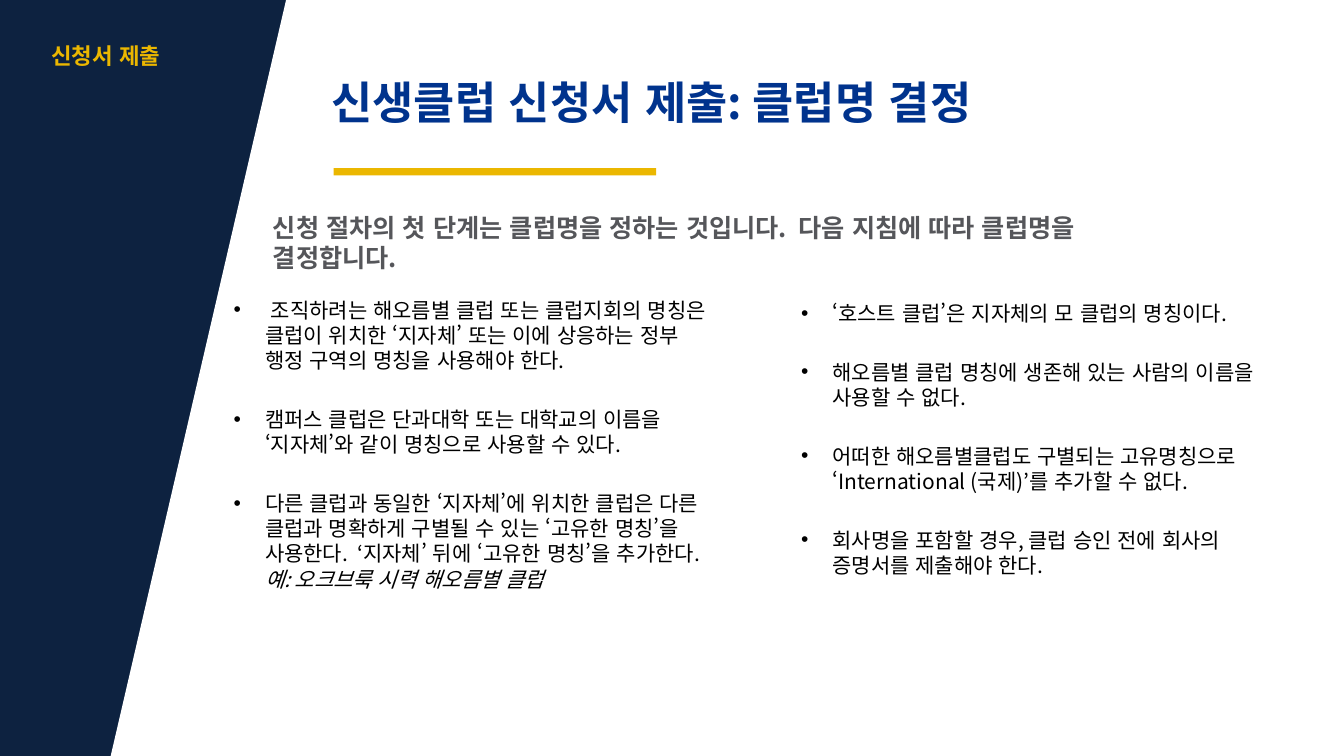
from lxml import etree
from pptx import Presentation
from pptx.dml.color import RGBColor
from pptx.enum.lang import MSO_LANGUAGE_ID as LANG
from pptx.enum.shapes import MSO_SHAPE
from pptx.enum.text import MSO_ANCHOR, PP_ALIGN
from pptx.oxml.ns import qn
from pptx.util import Cm, Pt

NAVY = RGBColor(0x0D, 0x22, 0x40)
BLUE = RGBColor(0x00, 0x33, 0x8D)
GOLD = RGBColor(0xEB, 0xB7, 0x00)
GRAY = RGBColor(0x55, 0x56, 0x5A)
BLACK = RGBColor(0, 0, 0)
WHITE = RGBColor(0xFF, 0xFF, 0xFF)
FONT = "Noto Sans CJK KR"
WIDTH, HEIGHT = 33.87, 19.05

NAMING_RULES = [
    [(" ", "조직하려는 해오름별 클럽 또는 클럽지회의 명칭은 클럽이 위치한 ‘지자체’ "
      "또는 이에 상응하는 정부 행정 구역의 명칭을 사용해야 한다."),
     ("캠퍼스 클럽은 단과대학 또는 대학교의 이름을 ‘지자체’와 같이 명칭으로 사용할 수 있다.",),
     ("다른 클럽과 동일한 ‘지자체’에 위치한 클럽은 다른 클럽과 명확하게 구별될 수 있는 "
      "‘고유한 명칭’을 사용한다.  ‘지자체’ 뒤에 ‘고유한 명칭’을 추가한다. ",
      "예: 오크브룩 시력 해오름별 클럽")],
    [("‘호스트 클럽’은 지자체의 모 클럽의 명칭이다.",),
     ("해오름별 클럽 명칭에 생존해 있는 사람의 이름을 사용할 수 없다.",),
     ("어떠한 해오름별클럽도 구별되는 고유명칭으로 ‘International (국제)’를 추가할 수 없다.",),
     ("회사명을 포함할 경우, 클럽 승인 전에 회사의 증명서를 제출해야 한다.",)],
]


def add_run(p, text, size=15, color=BLACK, bold=False, italic=False):
    r = p.add_run()
    r.text = text
    r.font.name, r.font.size = FONT, Pt(size)
    r.font.bold, r.font.italic = bold, italic
    r.font.color.rgb = color
    r.font.language_id = LANG.KOREAN
    ea = etree.SubElement(r._r.get_or_add_rPr(), qn("a:ea"))
    ea.set("typeface", FONT)


class ClubSlide:
    def __init__(self, prs):
        self.slide = prs.slides.add_slide(prs.slide_layouts[5])
        self.shapes = self.slide.shapes

    def paint(self, sp, color):
        sp.shadow.inherit = False
        sp.fill.solid()
        sp.fill.fore_color.rgb = color
        sp.line.fill.background()

    def rect(self, x, y, w, h, color):
        sp = self.shapes.add_shape(MSO_SHAPE.RECTANGLE, Cm(x), Cm(y), Cm(w), Cm(h))
        self.paint(sp, color)

    def outline(self, points, color):
        start, *rest = [(Cm(x), Cm(y)) for x, y in points]
        builder = self.shapes.build_freeform(*start)
        builder.add_line_segments(rest, close=True)
        self.paint(builder.convert_to_shape(), color)

    def frame(self, sp, x, y, w, h):
        sp.left, sp.top, sp.width, sp.height = Cm(x), Cm(y), Cm(w), Cm(h)
        tf = sp.text_frame
        tf.word_wrap = True
        tf.vertical_anchor = MSO_ANCHOR.TOP
        return tf

    def text(self, text, x, y, w, h, sp=None, spacing=None, **style):
        sp = sp or self.shapes.add_textbox(0, 0, 0, 0)
        p = self.frame(sp, x, y, w, h).paragraphs[0]
        p.alignment = PP_ALIGN.LEFT
        p.line_spacing = spacing
        add_run(p, text, **style)

    def title(self, text, x, y, w, h, **style):
        sp = self.shapes.title
        self.shapes._spTree.append(sp._element)
        self.text(text, x, y, w, h, sp=sp, **style)

    def bullets(self, items, x, y, w, h):
        tf = self.frame(self.shapes.add_textbox(0, 0, 0, 0), x, y, w, h)
        tf.margin_top = 0
        for i, parts in enumerate(items):
            p = tf.paragraphs[0] if i == 0 else tf.add_paragraph()
            pPr = p._p.get_or_add_pPr()
            pPr.set("marL", str(Cm(0.79)))
            pPr.set("indent", str(-Cm(0.79)))
            etree.SubElement(pPr, qn("a:buFont")).set("typeface", "Arial")
            etree.SubElement(pPr, qn("a:buChar")).set("char", "•")
            p.space_before = Pt(24 if i else 0)
            for part in parts:
                add_run(p, part, italic=part.startswith("예:"))


def main():
    prs = Presentation()
    prs.slide_width, prs.slide_height = Cm(WIDTH), Cm(HEIGHT)
    s = ClubSlide(prs)
    s.rect(0, 0, WIDTH, HEIGHT, NAVY)
    s.outline([(7.21, 0), (WIDTH, 0), (WIDTH, HEIGHT), (2.79, HEIGHT)], WHITE)
    s.text("신청서 제출", 1.04, 1.02, 4.32, 2.69, spacing=0.9,
           size=16, color=GOLD, bold=True)
    s.rect(8.41, 4.24, 8.13, 0.18, GOLD)
    s.title("신생클럽 신청서 제출: 클럽명 결정", 8.1, 1.9, 23.27, 2.31, spacing=0.9,
            size=32, color=BLUE, bold=True)
    s.text("신청 절차의 첫 단계는 클럽명을 정하는 것입니다.  다음 지침에 따라 클럽명을 결정합니다.",
           6.63, 5.23, 23.39, 1.8, size=18, color=GRAY, bold=True)
    for items, x, y in zip(NAMING_RULES, (5.64, 19.94), (7.49, 7.57)):
        s.bullets(items, x, y, 12.6, 10.8)
    prs.save("out.pptx")


if __name__ == "__main__":
    main()
